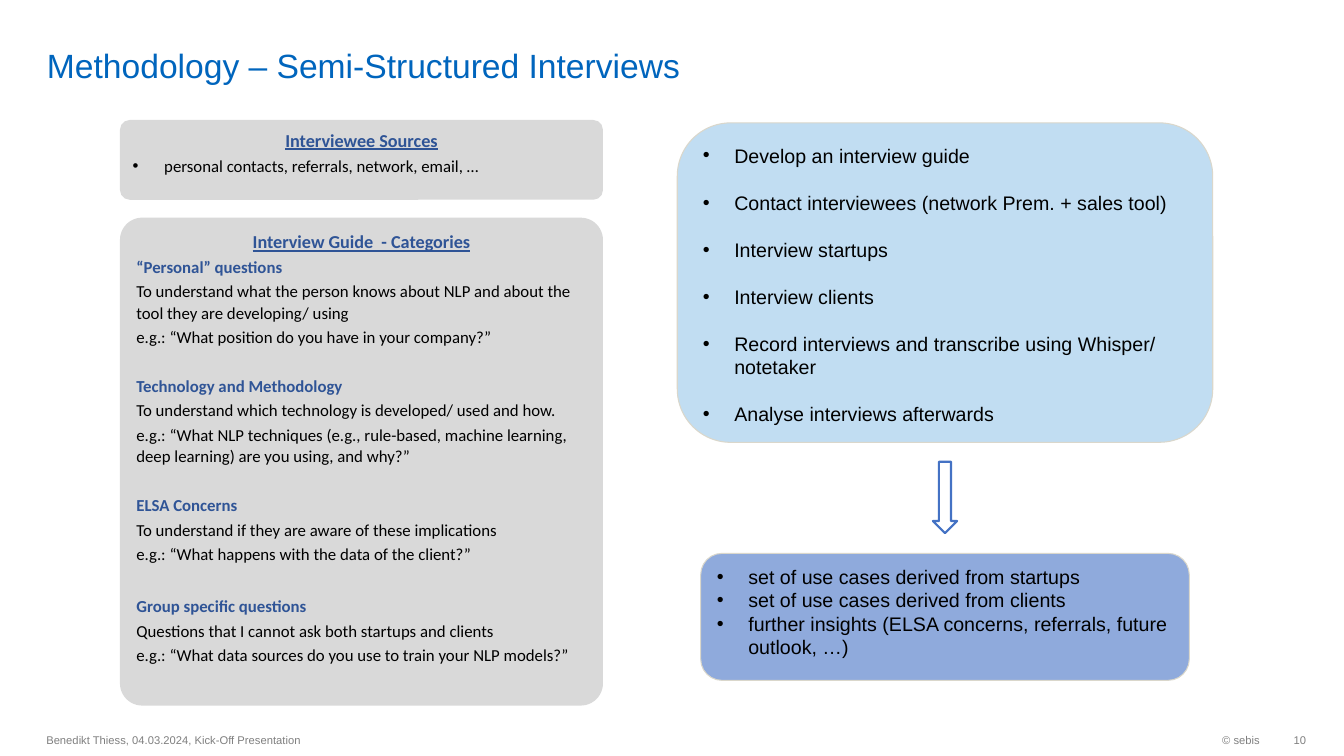
from lxml.etree import SubElement
from pptx import Presentation
from pptx.dml.color import RGBColor
from pptx.enum.shapes import MSO_SHAPE as Preset
from pptx.enum.text import MSO_ANCHOR as Anchor, PP_ALIGN as Align
from pptx.oxml.ns import qn
from pptx.util import Pt

COLORS = {
    "title": "0065BD", "footer": "7F7F7F", "heading": "2F5496", "text": "000000",
    "card": "D9D9D9", "steps": "C1DDF2", "results": "8FAADC",
    "border": "DAD7CB", "arrow": "4472C4", "white": "FFFFFF",
}
STEPS = [
    "Develop an interview guide",
    "Contact interviewees (network Prem. + sales tool)",
    "Interview startups",
    "Interview clients",
    "Record interviews and transcribe using Whisper/ notetaker",
    "Analyse interviews afterwards",
]
RESULTS = [
    "set of use cases derived from startups",
    "set of use cases derived from clients",
    "further insights (ELSA concerns, referrals, future outlook, …)",
]
CATEGORIES = [
    (2, "“Personal” questions",
     "To understand what the person knows about NLP and about the tool they are developing/ using",
     "e.g.: “What position do you have in your company?”"),
    (19.5, "Technology and Methodology",
     "To understand which technology is developed/ used and how.",
     "e.g.: “What NLP techniques (e.g., rule-based, machine learning, deep learning) "
     "are you using, and why?”"),
    (19.5, "ELSA Concerns",
     "To understand if they are aware of these implications",
     "e.g.: “What happens with the data of the client?”"),
    (22, "Group specific questions",
     "Questions that I cannot ask both startups and clients",
     "e.g.: “What data sources do you use to train your NLP models?”"),
]


def rgb(name):
    """Return the named colour."""
    return RGBColor.from_string(COLORS[name])


def write(frame, text, size=14, font="Arial", color="text", bold=False, underline=False,
          align=Align.LEFT, before=0, spacing=None, bullet=False):
    """Add one formatted paragraph to a text frame."""
    first = not frame.paragraphs[0].runs
    para = frame.paragraphs[0] if first else frame.add_paragraph()
    para.alignment = align
    if spacing:
        para.line_spacing = spacing
    if before and not first:
        para.space_before = Pt(before)
    if bullet:
        props = para._p.get_or_add_pPr()
        props.set("marL", str(Pt(22.5)))
        props.set("indent", str(-Pt(22.5)))
        SubElement(props, qn("a:buFont"), typeface="Arial")
        SubElement(props, qn("a:buChar"), char="•")
    span = para.add_run()
    span.text = text
    span.font.size, span.font.name = Pt(size), font
    span.font.bold, span.font.underline = bold, underline
    span.font.color.rgb = rgb(color)


def add_label(page, box, text, anchor=Anchor.MIDDLE, margins=(7.2, 3.6, 7.2, 3.6), **style):
    """Place a plain text box with one paragraph."""
    frame = page.shapes.add_textbox(*map(Pt, box)).text_frame
    frame.word_wrap, frame.vertical_anchor = True, anchor
    (frame.margin_left, frame.margin_top,
     frame.margin_right, frame.margin_bottom) = map(Pt, margins)
    write(frame, text, **style)


def add_panel(page, box, fill, preset=Preset.ROUNDED_RECTANGLE, corner=0.5,
              border=None, weight=0.75):
    """Draw a filled shape and return its text frame."""
    panel = page.shapes.add_shape(preset, *map(Pt, box))
    panel.shadow.inherit = False
    panel.adjustments[0] = corner
    panel.fill.solid()
    panel.fill.fore_color.rgb = rgb(fill)
    if border:
        panel.line.color.rgb = rgb(border)
        panel.line.width = Pt(weight)
    else:
        panel.line.fill.background()
    frame = panel.text_frame
    frame.word_wrap, frame.vertical_anchor = True, Anchor.TOP
    return frame


def add_guide_column(page, left, top, width):
    """Stack the source card and the question card."""
    body = dict(size=12, font="Calibri", spacing=1.07, before=2)
    heading = dict(body, size=13, color="heading", bold=True, underline=True,
                   align=Align.CENTER)
    sources = add_panel(page, (left, top, width, 57), "card", corner=0.122)
    write(sources, "Interviewee Sources", **heading)
    write(sources, "personal contacts, referrals, network, email, …", bullet=True, **body)

    guide = add_panel(page, (left, top + 69.8, width, 348.5), "card", corner=0.046)
    write(guide, "Interview Guide  - Categories", **heading)
    for gap, name, purpose, example in CATEGORIES:
        write(guide, name, **dict(body, before=gap, color="heading", bold=True))
        for line in (purpose, example):
            write(guide, line, **body)


def add_process_column(page, left, top, width):
    """Stack the steps, the arrow and the results on one centre line."""
    center = left + width / 2
    steps = add_panel(page, (left, top, width, 228.2), "steps", corner=0.167, border="border")
    for step in STEPS:
        write(steps, step, before=16.8, bullet=True)
    add_panel(page, (center - 8.65, top + 242, 17.3, 51), "white", Preset.DOWN_ARROW,
              border="arrow", weight=1.5)
    results = add_panel(page, (center - 174.5, top + 307.5, 349, 90.7), "results",
                        corner=0.167, border="border")
    for result in RESULTS:
        write(results, result, bullet=True)


def add_footer(page, left, top, right):
    """Place author, copyright and page number on the bottom line."""
    style = dict(size=8, color="footer")
    add_label(page, (left, top, 453.6, 23), "Benedikt Thiess, 04.03.2024, Kick-Off Presentation",
              **style)
    add_label(page, (right - 194, top, 168, 23), "© sebis", align=Align.RIGHT, **style)
    add_label(page, (right - 26, top, 26, 23), "10", align=Align.RIGHT,
              margins=(7.2, 3.6, 0, 3.6), **style)


def main():
    """Build and save the slide."""
    deck = Presentation()
    deck.slide_width, deck.slide_height = Pt(960), Pt(540)
    page = deck.slides.add_slide(deck.slide_layouts[6])
    add_label(page, (26.5, 3.6, 834, 57), "Methodology – Semi-Structured Interviews",
              anchor=Anchor.BOTTOM, margins=(7.2, 0, 7.2, 0), size=24, color="title")
    add_guide_column(page, 85.7, 85.7, 345)
    add_process_column(page, 483.8, 87.8, 382.5)
    add_footer(page, 26, 517.4, 933)
    deck.save("out.pptx")


if __name__ == "__main__":
    main()
